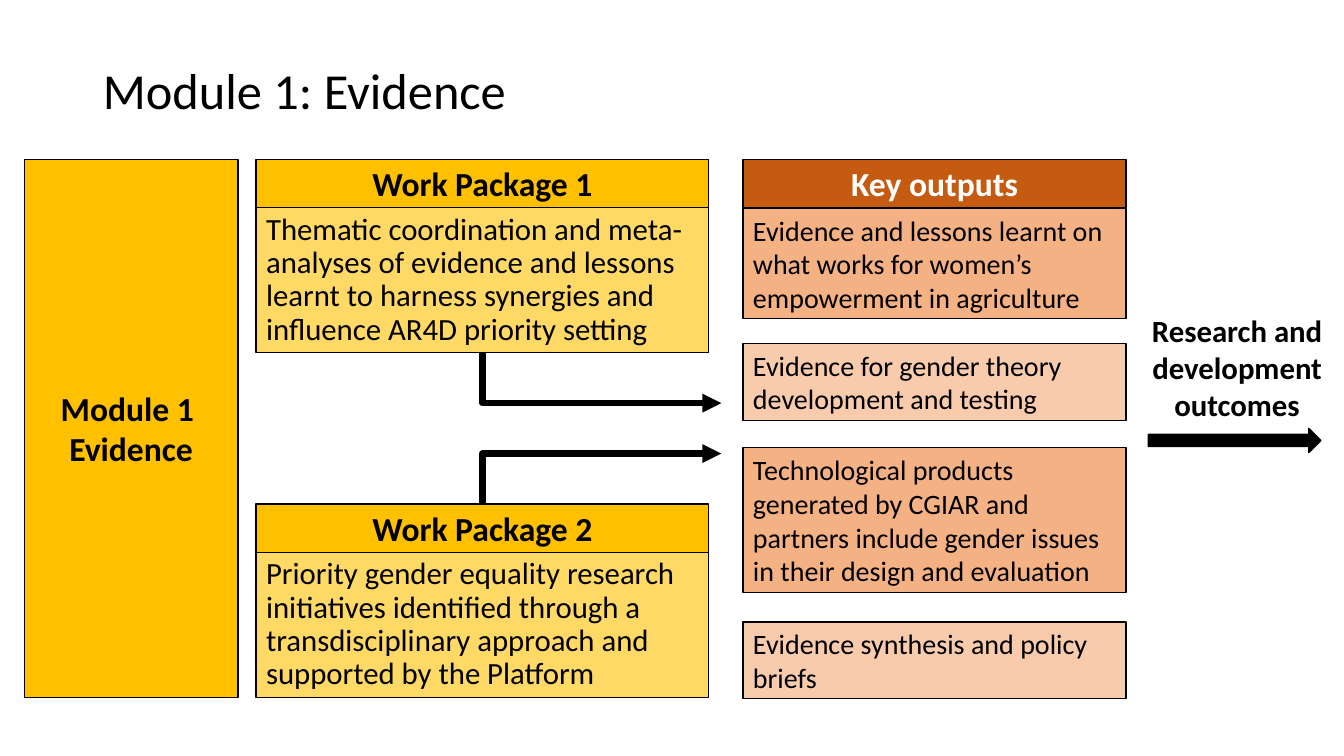
from dataclasses import dataclass

from lxml import etree
from pptx import Presentation
from pptx import util as u
from pptx.dml.color import RGBColor
from pptx.enum import shapes, text
from pptx.oxml import ns


@dataclass(frozen=True)
class Theme:
    """Colours, type sizes and line widths of the slide."""
    font: str = "Calibri"
    ink: str = "000000"
    paper: str = "FFFFFF"
    gold: str = "FFC000"
    pale_gold: str = "FFD966"
    rust: str = "C55A11"
    peach: str = "F4B183"
    pale_peach: str = "F8CBAD"
    title: int = 36
    heading: int = 24
    body: int = 22
    output: int = 20
    border: float = 1
    flow: float = 4.5


THEME = Theme()
LEFT, CENTER = text.PP_ALIGN.LEFT, text.PP_ALIGN.CENTER
HEADER_HEIGHT = 0.48
PACKAGE_HEIGHT = 1.92
TOP, HEIGHT = 1.58, 5.34
PACKAGES = [
    ("Work Package 1", "Thematic coordination and meta-analyses of evidence and lessons "
     "learnt to harness synergies and influence AR4D priority setting"),
    ("Work Package 2", "Priority gender equality research initiatives identified through a "
     "transdisciplinary approach and supported by the Platform"),
]
OUTPUTS = [
    (0.49, 1.09, "Evidence and lessons learnt on what works for women’s empowerment in agriculture"),
    (1.83, 0.76, "Evidence for gender theory development and testing"),
    (2.86, 1.44, "Technological products generated by CGIAR and partners include gender issues "
     "in their design and evaluation"),
    (4.59, 0.76, "Evidence synthesis and policy briefs"),
]


def inches(*lengths):
    """Convert several lengths to Inches."""
    return [u.Inches(length) for length in lengths]


def write(frame, wording, size, color=THEME.ink, bold=False, align=LEFT, spacing=None):
    """Fill a text frame and format its paragraphs and runs."""
    frame.text = wording
    frame.word_wrap = True
    for paragraph in frame.paragraphs:
        paragraph.alignment = align
        if spacing:
            paragraph.line_spacing = spacing
        for run in paragraph.runs:
            run.font.name = THEME.font
            run.font.size = u.Pt(size)
            run.font.bold = bold
            run.font.color.rgb = RGBColor.from_string(color)


def add_panel(slide, box, fill, kind=shapes.MSO_SHAPE.RECTANGLE):
    """Add a filled shape with a thin border and return it."""
    panel = slide.shapes.add_shape(kind, *inches(*box))
    panel.shadow.inherit = False
    panel.fill.solid()
    panel.fill.fore_color.rgb = RGBColor.from_string(fill)
    panel.line.color.rgb = RGBColor.from_string(THEME.ink)
    panel.line.width = u.Pt(THEME.border)
    panel.text_frame.vertical_anchor = text.MSO_ANCHOR.MIDDLE
    return panel


def add_heading(slide, box, wording, fill, color=THEME.ink):
    """Add a panel with bold centred wording."""
    heading = add_panel(slide, box, fill)
    write(heading.text_frame, wording, THEME.heading, color, bold=True, align=CENTER)


def add_title(slide, box, wording):
    """Place and format the title placeholder."""
    title = slide.shapes.title
    title.left, title.top, title.width, title.height = inches(*box)
    title.text_frame.vertical_anchor = text.MSO_ANCHOR.MIDDLE
    write(title.text_frame, wording, THEME.title, spacing=0.9)


def add_package(slide, box, name, aim):
    """Add a work package: its heading above its aim."""
    left, top, width, height = box
    add_heading(slide, (left, top, width, HEADER_HEIGHT), name, THEME.gold)
    aim_box = left, top + HEADER_HEIGHT, width, height - HEADER_HEIGHT
    aim_panel = add_panel(slide, aim_box, THEME.pale_gold)
    write(aim_panel.text_frame, aim, THEME.body, spacing=0.9)


def add_outputs(slide, box):
    """Add the key outputs heading and the outputs below it."""
    left, top, width, _ = box
    add_heading(slide, (left, top, width, HEADER_HEIGHT), "Key outputs", THEME.rust, THEME.paper)
    for index, (offset, height, wording) in enumerate(OUTPUTS):
        fill = THEME.pale_peach if index % 2 else THEME.peach
        output = add_panel(slide, (left, top + offset, width, height), fill)
        write(output.text_frame, wording, THEME.output)


def add_flow(slide, box):
    """Add an elbow arrow from a package edge at the box top to its far right."""
    left, top, width, drop = box
    flow = slide.shapes.add_connector(
        shapes.MSO_CONNECTOR.ELBOW, *inches(left + width, top + drop, left, top))
    flow.line.color.rgb = RGBColor.from_string(THEME.ink)
    flow.line.width = u.Pt(THEME.flow)
    properties = flow._element.spPr
    properties.find(ns.qn("a:prstGeom")).set("prst", "bentConnector2")
    etree.SubElement(properties.find(ns.qn("a:ln")), ns.qn("a:headEnd"), type="triangle")
    etree.SubElement(properties, ns.qn("a:effectLst"))


def add_outcomes(slide, box):
    """Add the outcomes label with an arrow beneath it."""
    left, top, width, height = box
    label = slide.shapes.add_textbox(*inches(*box))
    write(label.text_frame, "Research and development outcomes", THEME.body,
          bold=True, align=CENTER)
    add_panel(slide, (left + 0.16, top + height, 1.71, 0.24), THEME.ink,
              shapes.MSO_SHAPE.RIGHT_ARROW)


def main():
    """Build the slide and save it."""
    deck = Presentation()
    deck.slide_width, deck.slide_height = inches(13.33, 7.5)
    slide = deck.slides.add_slide(deck.slide_layouts[5])
    add_title(slide, (0.92, 0.2, 11.5, 1.45), "Module 1: Evidence")
    add_outcomes(slide, (11.23, 3.04, 2.08, 1.21))
    add_heading(slide, (0.24, TOP, 2.12, HEIGHT), "Module 1 \nEvidence", THEME.gold)
    left, width = 2.54, 4.49
    package_tops = TOP, TOP + HEIGHT - PACKAGE_HEIGHT
    for top, (name, aim) in zip(package_tops, PACKAGES):
        add_package(slide, (left, top, width, PACKAGE_HEIGHT), name, aim)
    add_outputs(slide, (7.37, TOP, 3.8, HEIGHT))
    for edge, drop in ((TOP + PACKAGE_HEIGHT, 0.5), (package_tops[1], -0.5)):
        add_flow(slide, (left + width / 2, edge, 2.37, drop))
    deck.save("out.pptx")


if __name__ == "__main__":
    main()
